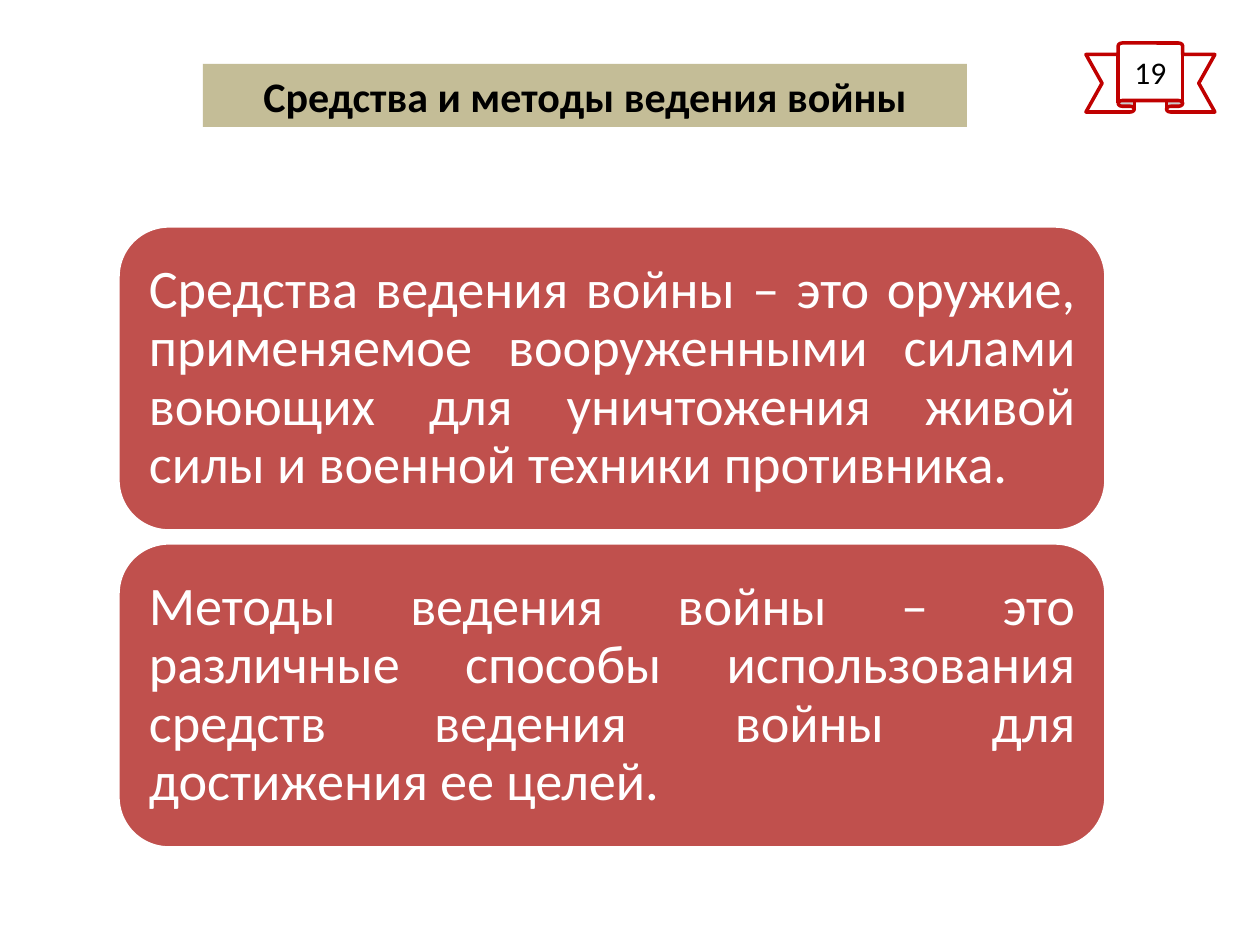
from pptx import Presentation
from pptx.dml.color import RGBColor
from pptx.enum.shapes import MSO_SHAPE as Shape
from pptx.enum.text import MSO_ANCHOR as Anchor, PP_ALIGN as Align
from pptx.util import Pt

PX = 914400 // 126  # EMU per px, 126 px to the inch

WHITE = RGBColor(0xFF, 0xFF, 0xFF)
BLACK = RGBColor(0x00, 0x00, 0x00)
TAN = RGBColor(0xC4, 0xBD, 0x97)
BRICK = RGBColor(0xC0, 0x50, 0x4D)
RED = RGBColor(0xC0, 0x00, 0x00)


def add_block(kind, box, fill, line, text, size, color, align):
    block = slide.shapes.add_shape(kind, *[v * PX for v in box])
    block.shadow.inherit = False
    block.fill.solid()
    block.fill.fore_color.rgb = fill
    if line is None:
        block.line.fill.background()
    else:
        block.line.color.rgb = line
        block.line.width = Pt(2)
    frame = block.text_frame
    frame.word_wrap = True
    frame.vertical_anchor = Anchor.MIDDLE
    paragraph = frame.paragraphs[0]
    paragraph.text = text
    paragraph.alignment = align
    font = paragraph.runs[0].font
    font.name = "Calibri"
    font.size = Pt(size)
    font.color.rgb = color
    return frame


deck = Presentation()
deck.slide_width = 1260 * PX
deck.slide_height = 945 * PX
slide = deck.slides.add_slide(deck.slide_layouts[6])

# Page number ribbon
add_block(Shape.UP_RIBBON, (1086, 43, 129, 69), WHITE, RED,
          "19", 18, BLACK, Align.CENTER)

# Title bar
title = add_block(Shape.RECTANGLE, (203, 64, 764, 63), TAN, None,
                  "Средства и методы ведения войны", 24, BLACK, Align.CENTER)
title.vertical_anchor = Anchor.TOP
title.paragraphs[0].runs[0].font.bold = True

# Definitions, stacked at an equal pitch
DEFINITIONS = [
    "Средства ведения войны – это оружие, применяемое вооруженными силами "
    "воюющих для уничтожения живой силы и военной техники противника.",
    "Методы ведения войны – это различные способы использования средств "
    "ведения войны для достижения ее целей.",
]
TOP, HEIGHT, GAP = 226, 305, 12
for i, definition in enumerate(DEFINITIONS):
    panel = add_block(Shape.ROUNDED_RECTANGLE,
                      (118, TOP + i * (HEIGHT + GAP), 988, HEIGHT),
                      BRICK, WHITE, definition, 31, WHITE, Align.JUSTIFY)
    panel.margin_left = panel.margin_right = 16 * PX
    panel.margin_top = panel.margin_bottom = 16 * PX
    panel.paragraphs[0].line_spacing = 0.9

deck.save("out.pptx")
